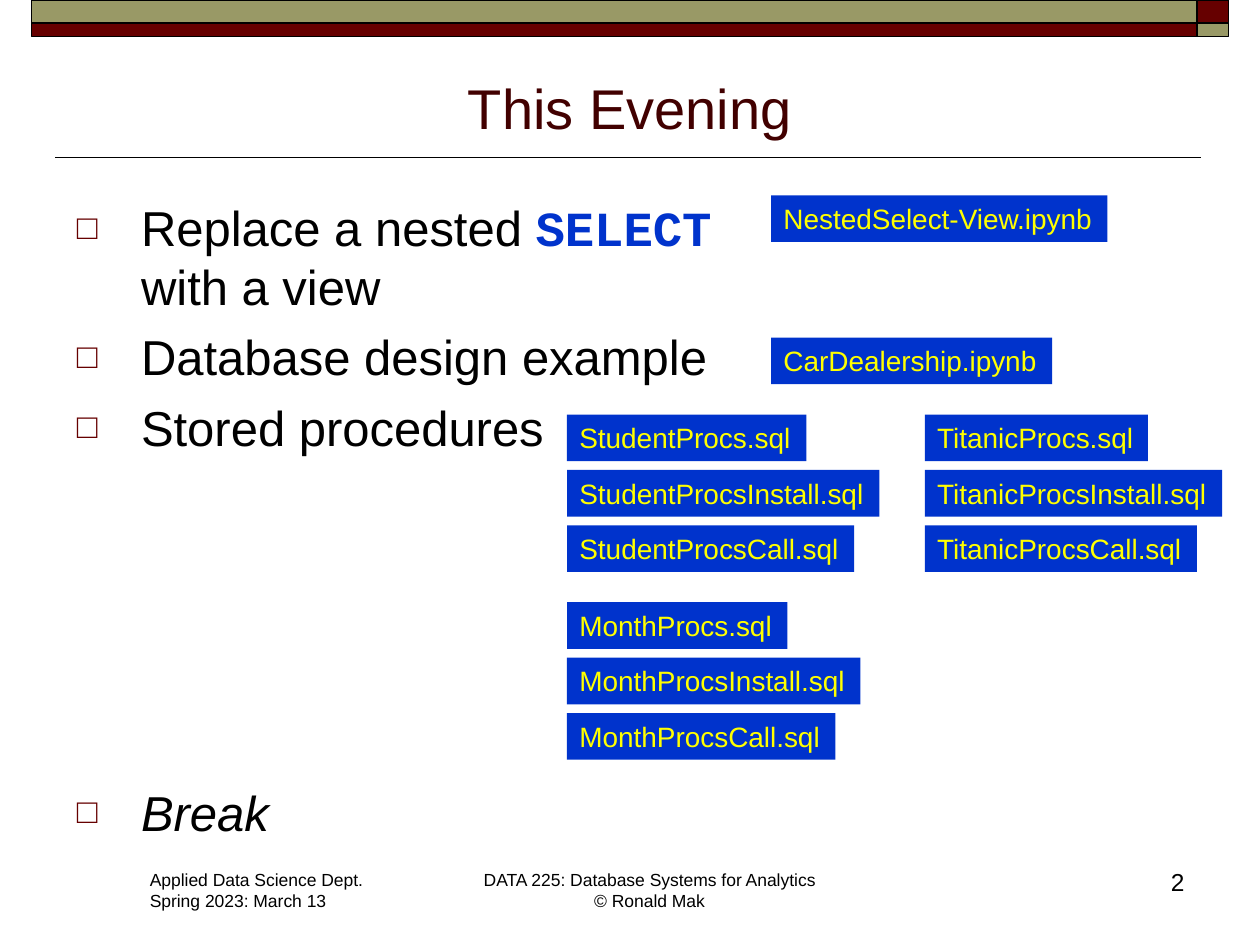
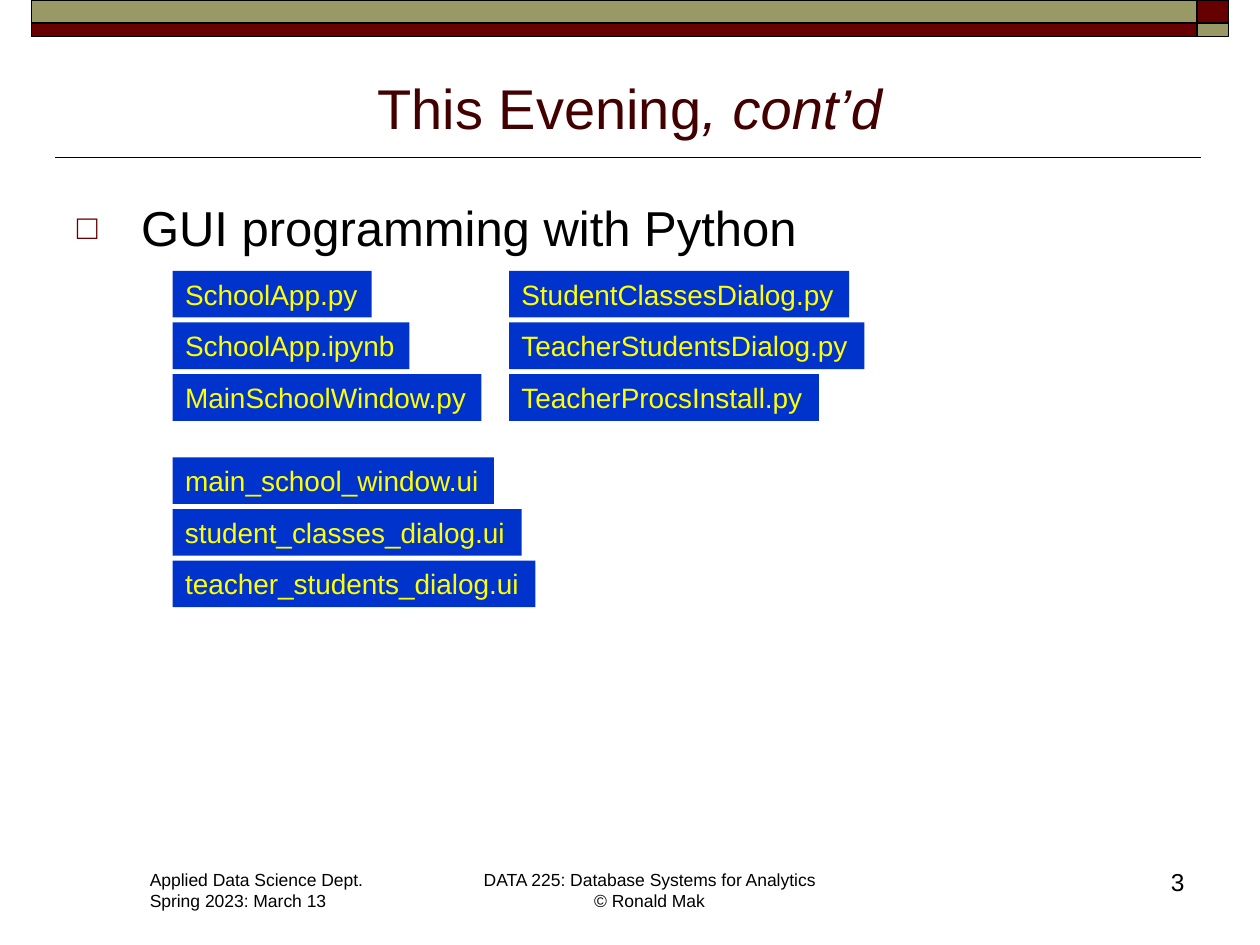
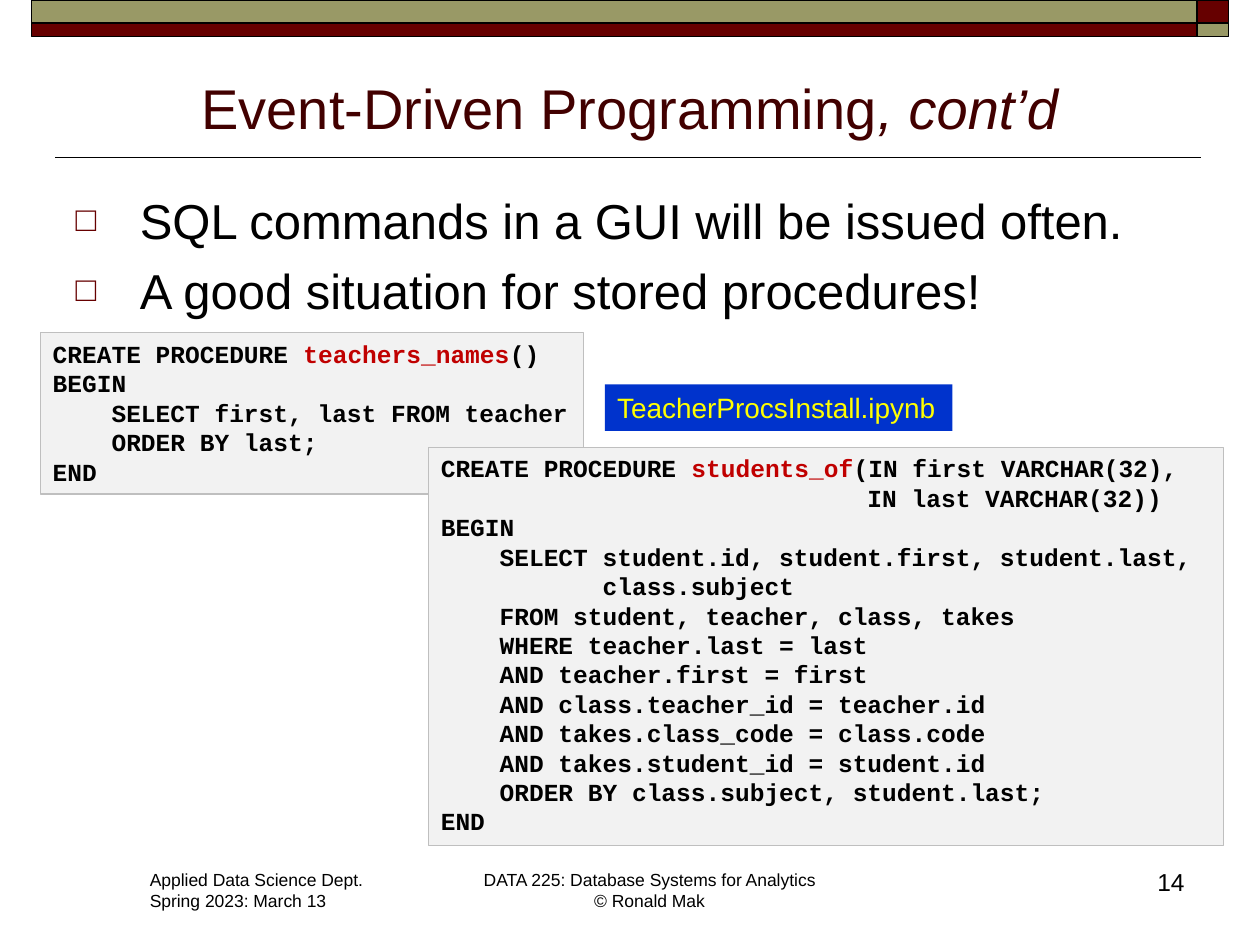
"""Build three lecture slides on stored procedures and GUI programming."""
from lxml import etree
from pptx import Presentation
from pptx.dml.color import RGBColor
from pptx.enum.shapes import MSO_CONNECTOR, MSO_SHAPE
from pptx.enum.text import MSO_ANCHOR, MSO_AUTO_SIZE, PP_ALIGN
from pptx.oxml.ns import qn
from pptx.util import Inches, Pt

BLACK = RGBColor(0x00, 0x00, 0x00)
MAROON = RGBColor(0x66, 0x00, 0x00)
OLIVE = RGBColor(0x99, 0x99, 0x66)
TITLE_BROWN = RGBColor(0x42, 0x00, 0x00)
BLUE = RGBColor(0x00, 0x33, 0xCC)
YELLOW = RGBColor(0xFF, 0xFF, 0x00)
RED = RGBColor(0xC0, 0x00, 0x00)
CODE_GRAY = RGBColor(0xF2, 0xF2, 0xF2)
CODE_BORDER = RGBColor(0xBF, 0xBF, 0xBF)

SANS, MONO = "Arial", "Courier New"
CHIP_HEIGHT = 0.37
BULLET_GAP = 6.5
CONTINUED = (", cont’d", {"italic": True})

BANDS = [
    ((0.25, 0, 9.25, 0.18), OLIVE),
    ((9.5, 0, 0.25, 0.18), MAROON),
    ((0.25, 0.18, 9.25, 0.11), MAROON),
    ((9.5, 0.18, 0.25, 0.11), OLIVE),
]
FOOTERS = [
    ((1.09, 6.85, 1.91, 0.44), ["Applied Data Science Dept.", "Spring 2023: March 13"], PP_ALIGN.LEFT),
    ((3.71, 6.85, 2.89, 0.44), ["DATA 225: Database Systems for Analytics\n© Ronald Mak"], PP_ALIGN.CENTER),
]

TEACHERS_CODE = """\
CREATE PROCEDURE teachers_names()
BEGIN
    SELECT first, last FROM teacher
    ORDER BY last;
END"""
STUDENTS_CODE = """\
CREATE PROCEDURE students_of(IN first VARCHAR(32),
                             IN last VARCHAR(32))
BEGIN
    SELECT student.id, student.first, student.last,
           class.subject
    FROM student, teacher, class, takes
    WHERE teacher.last = last
    AND teacher.first = first
    AND class.teacher_id = teacher.id
    AND takes.class_code = class.code
    AND takes.student_id = student.id
    ORDER BY class.subject, student.last;
END"""

SLIDES = [
    {
        "number": 2,
        "title": ["This Evening"],
        "body_place": (0.51, 1.48, 9, 5.2),
        "bullets": [
            ["Replace a nested ", ("SELECT", {"font": MONO, "color": BLUE, "bold": True}), "\nwith a view"],
            "Database design example",
            "Stored procedures",
            [("Break", {"italic": True})],
        ],
        "last_gap": 186.5,
        "chip_pitch": 0.44,
        "chip_columns": [
            (6.12, 1.55, [("NestedSelect-View.ipynb", 2.67)]),
            (6.12, 2.68, [("CarDealership.ipynb", 2.23)]),
            (4.5, 3.29, [("StudentProcs.sql", 1.9), ("StudentProcsInstall.sql", 2.48),
                         ("StudentProcsCall.sql", 2.28)]),
            (7.34, 3.29, [("TitanicProcs.sql", 1.77), ("TitanicProcsInstall.sql", 2.36),
                          ("TitanicProcsCall.sql", 2.16)]),
            (4.5, 4.78, [("MonthProcs.sql", 1.75), ("MonthProcsInstall.sql", 2.33),
                         ("MonthProcsCall.sql", 2.13)]),
        ],
    },
    {
        "number": 3,
        "title": ["This Evening", CONTINUED],
        "body_place": (0.51, 1.48, 9, 0.57),
        "bullets": ["GUI programming with Python"],
        "chip_pitch": 0.41,
        "chip_columns": [
            (1.37, 2.15, [("SchoolApp.py", 1.58), ("SchoolApp.ipynb", 1.88),
                          ("MainSchoolWindow.py", 2.45)]),
            (4.04, 2.15, [("StudentClassesDialog.py", 2.7), ("TeacherStudentsDialog.py", 2.82),
                          ("TeacherProcsInstall.py", 2.46)]),
            (1.37, 3.63, [("main_school_window.ui", 2.55), ("student_classes_dialog.ui", 2.77),
                          ("teacher_students_dialog.ui", 2.88)]),
        ],
    },
    {
        "number": 14,
        "title": ["Event-Driven Programming", CONTINUED],
        "body_place": (0.5, 1.42, 9, 1.13),
        "bullets": [
            "SQL commands in a GUI will be issued often.",
            "A good situation for stored procedures!",
        ],
        "code": [
            ((0.32, 2.64, 4.31, 1.28), "teachers_names", TEACHERS_CODE),
            ((3.4, 3.55, 6.31, 3.16), "students_of", STUDENTS_CODE),
        ],
        "chip_pitch": 0.44,
        "chip_columns": [(4.8, 3.05, [("TeacherProcsInstall.ipynb", 2.76)])],
    },
]


def inches(place):
    return [Inches(length) for length in place]


def add_run(paragraph, text, size, color, font=SANS, bold=False, italic=False):
    for index, line in enumerate(text.split("\n")):
        if index:
            paragraph.add_line_break()
        if line:
            run = paragraph.add_run()
            run.text = line
            run.font.name, run.font.size = font, Pt(size)
            run.font.bold, run.font.italic = bold, italic
            run.font.color.rgb = color


def write(shape, paragraphs, align=PP_ALIGN.LEFT, anchor=MSO_ANCHOR.TOP, wrap=True,
          line_spacing=None, **run_format):
    frame = shape.text_frame
    frame.auto_size = MSO_AUTO_SIZE.NONE
    frame.word_wrap, frame.vertical_anchor = wrap, anchor
    for index, parts in enumerate(paragraphs):
        paragraph = frame.add_paragraph() if index else frame.paragraphs[0]
        paragraph.alignment = align
        paragraph.line_spacing = line_spacing
        for part in [parts] if isinstance(parts, str) else parts:
            text, changes = (part, {}) if isinstance(part, str) else part
            add_run(paragraph, text, **{**run_format, **changes})
    return frame


def add_box(slide, place, fill, border=None, border_width=1):
    box = slide.shapes.add_shape(MSO_SHAPE.RECTANGLE, *inches(place))
    box.shadow.inherit = False
    box.fill.solid()
    box.fill.fore_color.rgb = fill
    if border is None:
        box.line.fill.background()
    else:
        box.line.color.rgb = border
        box.line.width = Pt(border_width)
    return box


def add_text(slide, place, paragraphs, **text_format):
    write(slide.shapes.add_textbox(*inches(place)), paragraphs, color=BLACK, **text_format)


def move(shape, place):
    shape.left, shape.top, shape.width, shape.height = inches(place)


def add_bullet(paragraph):
    properties = paragraph._p.get_or_add_pPr()
    properties.set("marL", str(Inches(0.51)))
    properties.set("indent", str(-Inches(0.51)))
    color = etree.SubElement(properties, qn("a:buClr"))
    etree.SubElement(color, qn("a:srgbClr"), val=str(MAROON))
    etree.SubElement(properties, qn("a:buSzPct"), val="70000")
    etree.SubElement(properties, qn("a:buFont"), typeface=SANS)
    etree.SubElement(properties, qn("a:buChar"), char="□")


def add_frame(slide, number):
    rule = slide.shapes.add_connector(MSO_CONNECTOR.STRAIGHT, *inches((9.53, 1.25, 0.44, 1.25)))
    rule.line.color.rgb = BLACK
    rule.line.width = Pt(1)
    etree.SubElement(rule._element.spPr, qn("a:effectLst"))
    for place, color in BANDS:
        add_box(slide, place, color, BLACK)
    for place, lines, align in FOOTERS:
        add_text(slide, place, lines, align=align, wrap=False, size=10)
    add_text(slide, (7.42, 6.83, 2.08, 0.5), [str(number)], align=PP_ALIGN.RIGHT, size=14)


def add_bullets(body, content):
    move(body, content["body_place"])
    frame = write(body, content["bullets"], size=28, color=BLACK)
    frame.margin_top = Inches(0.09)
    for index, paragraph in enumerate(frame.paragraphs):
        paragraph.space_before = Pt(BULLET_GAP if index else 0)
        add_bullet(paragraph)
    if "last_gap" in content:
        frame.paragraphs[-1].space_before = Pt(content["last_gap"])


def add_code(slide, place, procedure, code):
    lines = []
    for line in code.splitlines():
        before, name, after = line.partition(procedure)
        lines.append([before, (name, {"color": RED}), after])
    box = add_box(slide, place, CODE_GRAY, CODE_BORDER, 0.75)
    write(box, lines, wrap=False, line_spacing=Pt(16.8), size=14, color=BLACK, font=MONO, bold=True)


def add_chips(slide, columns, pitch):
    for left, top, chips in columns:
        for row, (name, width) in enumerate(chips):
            chip = add_box(slide, (left, top + row * pitch, width, CHIP_HEIGHT), BLUE)
            write(chip, [name], wrap=False, size=16, color=YELLOW)


def build_slide(presentation, content):
    slide = presentation.slides.add_slide(presentation.slide_layouts[1])
    add_frame(slide, content["number"])
    title = slide.shapes.title
    move(title, (0.5, 0.45, 9, 0.72))
    write(title, [content["title"]], align=PP_ALIGN.CENTER, anchor=MSO_ANCHOR.BOTTOM,
          size=32, color=TITLE_BROWN)
    add_bullets(slide.placeholders[1], content)
    for place, procedure, code in content.get("code", []):
        add_code(slide, place, procedure, code)
    add_chips(slide, content["chip_columns"], content["chip_pitch"])


def main():
    presentation = Presentation()
    presentation.slide_width, presentation.slide_height = Inches(10), Inches(7.5)
    for content in SLIDES:
        build_slide(presentation, content)
    presentation.save("out.pptx")


if __name__ == "__main__":
    main()
